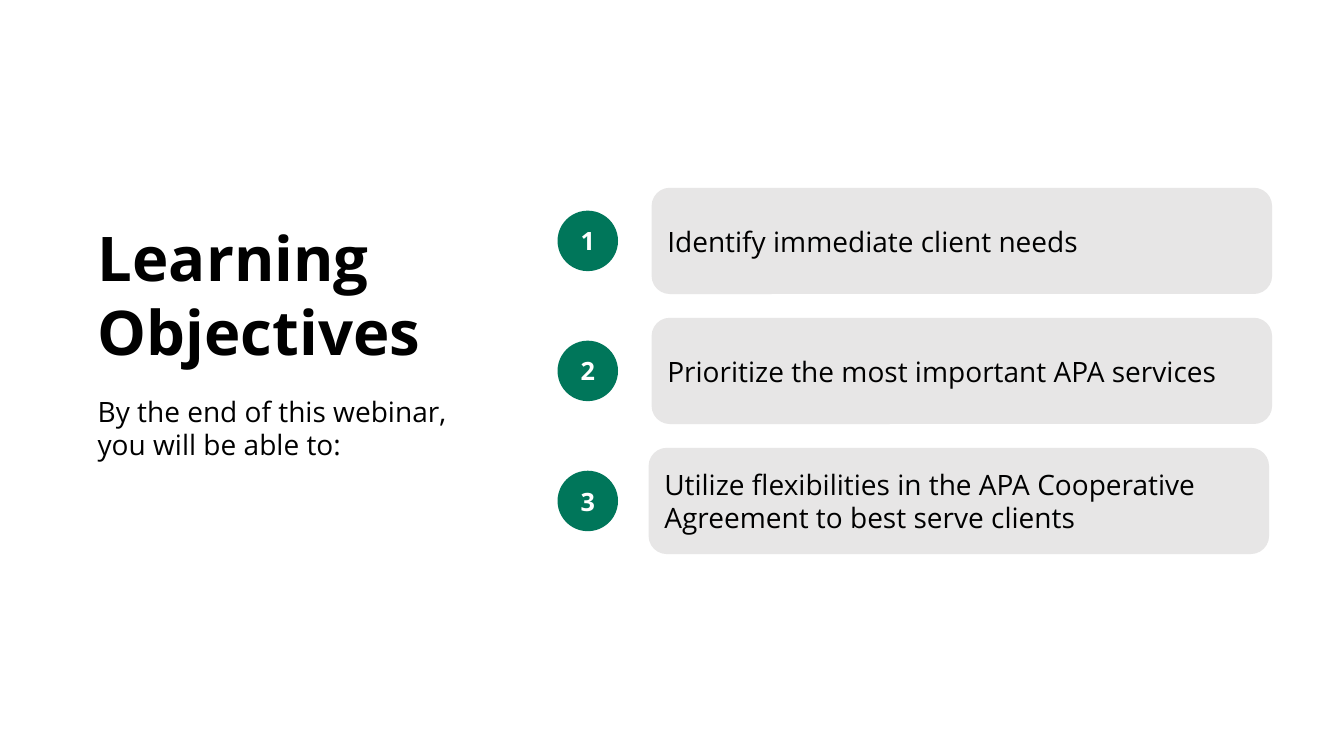
import pptx
import pptx.util
import pptx.dml.color
import pptx.enum.shapes
import pptx.enum.text

PX = 9144  # EMU: 100 px to the inch
RGB = pptx.dml.color.RGBColor
BLACK = RGB(0x00, 0x00, 0x00)
WHITE = RGB(0xFF, 0xFF, 0xFF)
GREEN = RGB(0x00, 0x76, 0x5A)
GREY = RGB(0xE7, 0xE6, 0xE6)
FONT = "Open Sans"
SHAPE = pptx.enum.shapes.MSO_SHAPE
ALIGN = pptx.enum.text.PP_ALIGN
ANCHOR = pptx.enum.text.MSO_ANCHOR

GOALS = [
    # left edge of card, text
    (647, "Identify immediate client needs"),
    (647, "Prioritize the most important APA services"),
    (644, "Utilize flexibilities in the APA Cooperative "
          "Agreement to best serve clients"),
]
TOP, STEP = 187, 129
CARD_W, CARD_H = 614, 104
DOT_X, DOT = 553, 60


def box(*sides):
    """Turn px lengths into EMU."""
    return [pptx.util.Emu(side * PX) for side in sides]


def write(frame, text, size=20, color=BLACK, bold=False,
          align=ALIGN.LEFT, anchor=ANCHOR.TOP):
    frame.word_wrap = True
    frame.auto_size = pptx.enum.text.MSO_AUTO_SIZE.NONE
    frame.vertical_anchor = anchor
    frame.text = text
    for para in frame.paragraphs:
        para.alignment = align
        font = para.font
        font.name = FONT
        font.size = pptx.util.Pt(size)
        font.bold = bold
        font.color.rgb = color


def set_title(slide, text):
    title = slide.shapes.title
    title.left, title.top, title.width, title.height = box(87, 213, 387, 158)
    write(title.text_frame, text, size=44, bold=True)


def add_intro(slide, text):
    intro = slide.shapes.add_textbox(*box(87, 386, 417, 77))
    write(intro.text_frame, text)


def add_shape(slide, kind, sides, fill, line=None):
    shape = slide.shapes.add_shape(kind, *box(*sides))
    shape.shadow.inherit = False
    shape.fill.solid()
    shape.fill.fore_color.rgb = fill
    if line is None:
        shape.line.fill.background()
    else:
        shape.line.color.rgb = line
        shape.line.width = pptx.util.Pt(1)
    return shape


def add_goal(slide, index, left, text):
    """Add a numbered dot and its card."""
    top = TOP + index * STEP
    dot_y = top + (CARD_H - DOT) // 2
    dot = add_shape(slide, SHAPE.OVAL, (DOT_X, dot_y, DOT, DOT), GREEN)
    write(dot.text_frame, str(index + 1), size=18, color=WHITE, bold=True,
          align=ALIGN.CENTER, anchor=ANCHOR.MIDDLE)
    card = add_shape(slide, SHAPE.ROUNDED_RECTANGLE,
                     (left, top, CARD_W, CARD_H), GREY, line=GREY)
    write(card.text_frame, text, anchor=ANCHOR.MIDDLE)


def main():
    deck = pptx.Presentation()
    deck.slide_width, deck.slide_height = box(1333, 750)
    slide = deck.slides.add_slide(deck.slide_layouts[5])
    set_title(slide, "Learning\nObjectives")
    add_intro(slide, "By the end of this webinar, you will be able to:")
    for index, (left, text) in enumerate(GOALS):
        add_goal(slide, index, left, text)
    deck.save("out.pptx")


if __name__ == "__main__":
    main()
